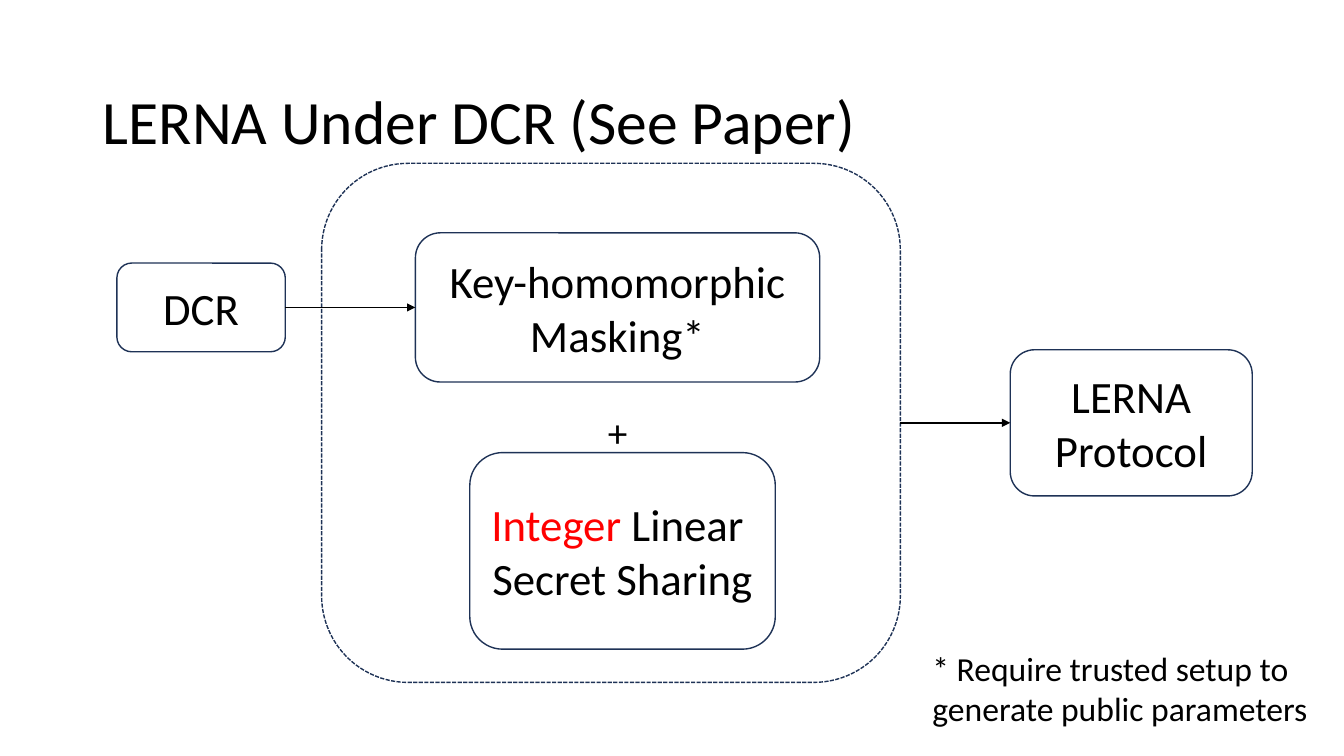
from pptx import Presentation
from pptx.dml.color import RGBColor
from pptx.enum.dml import MSO_LINE
from pptx.enum.shapes import MSO_CONNECTOR, MSO_SHAPE
from pptx.enum.text import MSO_ANCHOR as ANCHOR, PP_ALIGN as ALIGN
from pptx.oxml.ns import qn
from pptx.util import Inches, Pt
from lxml.etree import SubElement

BLACK = RGBColor(0x00, 0x00, 0x00)
RED = RGBColor(0xFF, 0x00, 0x00)
NAVY = RGBColor(0x1E, 0x32, 0x56)


def write(tf, *paragraphs, size=32, align=ALIGN.LEFT, anchor=ANCHOR.TOP, spacing=None):
    tf.word_wrap = True
    tf.vertical_anchor = anchor
    for i, runs in enumerate(paragraphs):
        p = tf.add_paragraph() if i else tf.paragraphs[0]
        p.alignment = align
        if spacing:
            p.line_spacing = spacing
        for text, color in runs:
            r = p.add_run()
            r.text = text
            r.font.name = "Calibri"
            r.font.size = Pt(size)
            r.font.color.rgb = color


class Diagram:
    line_width = Pt(1)

    def __init__(self, slide):
        self.s = slide

    def box(self, x, y, w, h, *paragraphs, dash=None):
        sp = self.s.shapes.add_shape(
            MSO_SHAPE.ROUNDED_RECTANGLE, Inches(x), Inches(y), Inches(w), Inches(h))
        sp.shadow.inherit = False
        sp.fill.background()
        sp.line.color.rgb = NAVY
        sp.line.width = self.line_width
        if dash:
            sp.line.dash_style = dash
        if paragraphs:
            write(sp.text_frame, *paragraphs, align=ALIGN.CENTER, anchor=ANCHOR.MIDDLE)
        return sp

    def label(self, x, y, w, h, text, **fmt):
        sp = self.s.shapes.add_textbox(Inches(x), Inches(y), Inches(w), Inches(h))
        write(sp.text_frame, [(text, BLACK)], **fmt)

    def arrow(self, source, target):
        c = self.s.shapes.add_connector(MSO_CONNECTOR.STRAIGHT, 0, 0, 0, 0)
        c.begin_connect(source, 3)
        c.end_connect(target, 1)
        c.line.color.rgb = BLACK
        c.line.width = self.line_width
        sp_pr = c.element.spPr
        SubElement(sp_pr.find(qn("a:ln")), qn("a:tailEnd"), type="triangle")
        SubElement(sp_pr, qn("a:effectLst"))


def main():
    prs = Presentation()
    prs.slide_width, prs.slide_height = Inches(13.33), Inches(7.5)
    d = Diagram(prs.slides.add_slide(prs.slide_layouts[6]))

    masking = d.box(4.12, 2.31, 4.01, 1.48, [("Key-homomorphic Masking*", BLACK)])
    frame = d.box(3.19, 1.62, 5.74, 5.15, dash=MSO_LINE.SQUARE_DOT)
    protocol = d.box(10.02, 3.47, 2.4, 1.45, [("LERNA Protocol", BLACK)])
    dcr = d.box(1.16, 2.61, 1.67, 0.88, [("DCR", BLACK)])
    d.arrow(frame, protocol)
    d.arrow(dcr, masking)
    d.label(5.93, 4, 0.61, 0.57, "+", size=28)
    d.label(0.92, 0.51, 11.5, 1.45, "LERNA Under DCR (See Paper)",
            size=44, anchor=ANCHOR.MIDDLE, spacing=0.9)
    d.box(4.66, 4.49, 3.03, 1.95,
          [("Integer", RED), (" Linear ", BLACK)], [("Secret Sharing", BLACK)])
    d.label(9.15, 6.38, 4.03, 0.91,
            "* Require trusted setup to generate public parameters", size=24)
    prs.save("out.pptx")


if __name__ == "__main__":
    main()
